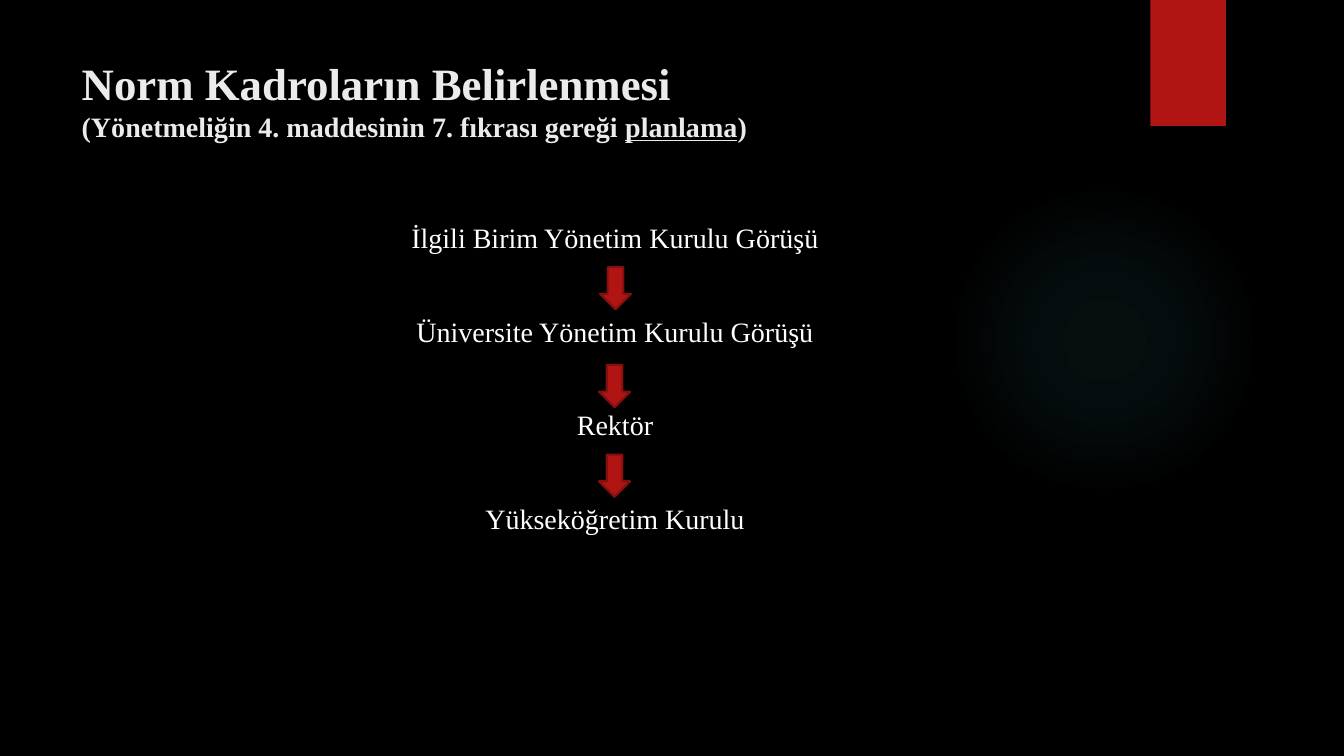
from lxml import etree
from pptx import Presentation
from pptx.dml.color import RGBColor
from pptx.enum.shapes import MSO_SHAPE
from pptx.enum.text import MSO_ANCHOR, PP_ALIGN
from pptx.util import Inches, Pt

OVAL, RECTANGLE, DOWN_ARROW = MSO_SHAPE.OVAL, MSO_SHAPE.RECTANGLE, MSO_SHAPE.DOWN_ARROW
TOP, LEFT, CENTER = MSO_ANCHOR.TOP, PP_ALIGN.LEFT, PP_ALIGN.CENTER

BLACK = RGBColor(0x00, 0x00, 0x00)
WHITE = RGBColor(0xFF, 0xFF, 0xFF)
LIGHT = RGBColor(0xEB, 0xEB, 0xEB)
RED = RGBColor(0xB0, 0x15, 0x13)
DARK_RED = RGBColor(0x82, 0x10, 0x0E)
FONT = "Times New Roman"
DRAWING = "http://schemas.openxmlformats.org/drawingml/2006/main"

GLOW_FILL = f"""<a:gradFill xmlns:a="{DRAWING}" rotWithShape="1"><a:gsLst>
<a:gs pos="0"><a:srgbClr val="50B9C1"><a:alpha val="7000"/></a:srgbClr></a:gs>
<a:gs pos="36000"><a:srgbClr val="50B9C1"><a:alpha val="6000"/></a:srgbClr></a:gs>
<a:gs pos="69000"><a:srgbClr val="50B9C1"><a:alpha val="0"/></a:srgbClr></a:gs>
</a:gsLst><a:path path="circle"><a:fillToRect l="50000" t="50000" r="50000" b="50000"/></a:path>
</a:gradFill>"""
RIBBON_SHADOW = f"""<a:outerShdw xmlns:a="{DRAWING}" blurRad="38100" dist="25400" dir="5400000"
rotWithShape="0"><a:srgbClr val="000000"><a:alpha val="45000"/></a:srgbClr></a:outerShdw>"""


def add_text(paragraph, text, size=20, color=WHITE, bold=False, underline=False):
    run = paragraph.add_run()
    run.text = text
    run.font.name = FONT
    run.font.size = Pt(size)
    run.font.color.rgb = color
    run.font.bold = bold
    run.font.underline = underline


def add_plain_shape(kind, left, top, width, height):
    shape = slide.shapes.add_shape(
        kind, Inches(left), Inches(top), Inches(width), Inches(height))
    shape.shadow.inherit = False
    shape.fill.solid()
    shape.fill.fore_color.rgb = RED
    shape.line.fill.background()
    return shape


presentation = Presentation()
presentation.slide_width = Inches(13.33)
presentation.slide_height = Inches(7.5)
slide = presentation.slides.add_slide(presentation.slide_layouts[5])
slide.background.fill.solid()
slide.background.fill.fore_color.rgb = BLACK

# Soft glow on the right
glow = add_plain_shape(OVAL, 9.41, 1.83, 3.08, 3.08)
solid_fill = glow._element.spPr.find(f"{{{DRAWING}}}solidFill")
glow._element.spPr.replace(solid_fill, etree.fromstring(GLOW_FILL))

# Red ribbon at the top
ribbon = add_plain_shape(RECTANGLE, 11.41, 0, 0.75, 1.25)
effects = ribbon._element.spPr.find(f"{{{DRAWING}}}effectLst")
effects.append(etree.fromstring(RIBBON_SHADOW))

# Title
title = slide.shapes.title
title.left, title.top = Inches(0.71), Inches(0.5)
title.width, title.height = Inches(10.29), Inches(1.64)
title.text_frame.vertical_anchor = TOP
title.text_frame.word_wrap = True
heading = title.text_frame.paragraphs[0]
heading.alignment = LEFT
add_text(heading, "Norm Kadroların Belirlenmesi", size=32, color=LIGHT, bold=True)
heading.add_line_break()
add_text(heading, "(Yönetmeliğin 4. maddesinin 7. fıkrası gereği ", color=LIGHT, bold=True)
add_text(heading, "planlama", color=LIGHT, bold=True, underline=True)
add_text(heading, ")", color=LIGHT, bold=True)

# Approval steps, evenly spaced
STEPS = [
    "İlgili Birim Yönetim Kurulu Görüşü",
    "Üniversite Yönetim Kurulu Görüşü",
    "Rektör",
    "Yükseköğretim Kurulu",
]
for index, step in enumerate(STEPS):
    box = slide.shapes.add_textbox(
        Inches(1.21), Inches(2.14 + 0.927 * index), Inches(9.78), Inches(0.51))
    box.text_frame.word_wrap = True
    paragraph = box.text_frame.paragraphs[0]
    paragraph.alignment = CENTER
    add_text(paragraph, step)

# Arrows between the steps
for left, top in [(5.95, 2.65), (5.94, 3.62), (5.94, 4.51)]:
    arrow = add_plain_shape(DOWN_ARROW, left, top, 0.31, 0.42)
    arrow.line.color.rgb = DARK_RED
    arrow.line.width = Pt(1.5)

presentation.save("out.pptx")
